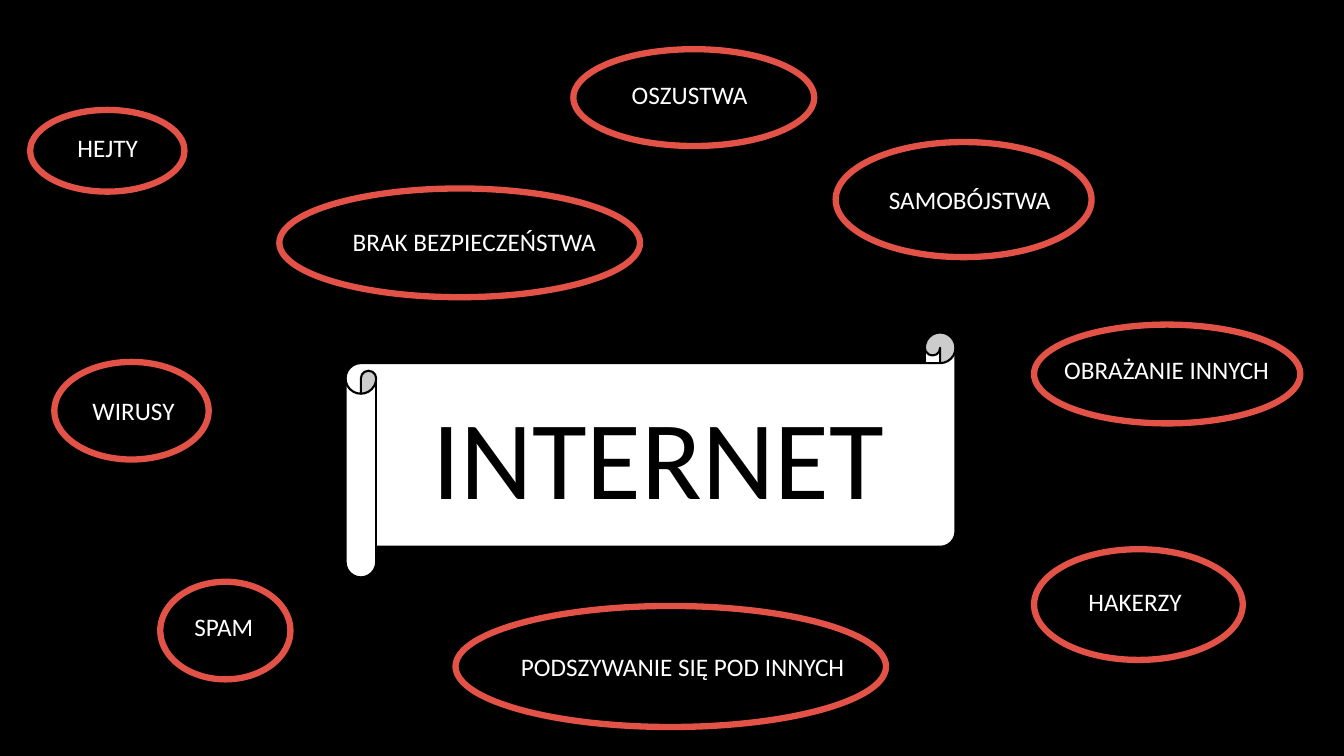
from pptx import Presentation
from pptx.dml.color import RGBColor
from pptx.enum.shapes import MSO_SHAPE
from pptx.enum.text import MSO_ANCHOR, MSO_AUTO_SIZE, PP_ALIGN
from pptx.util import Cm, Pt

OVAL, SCROLL = MSO_SHAPE.OVAL, MSO_SHAPE.HORIZONTAL_SCROLL
MIDDLE, TOP = MSO_ANCHOR.MIDDLE, MSO_ANCHOR.TOP
LEFT, CENTER = PP_ALIGN.LEFT, PP_ALIGN.CENTER
GROW = MSO_AUTO_SIZE.SHAPE_TO_FIT_TEXT

LABEL_HEIGHT = 1.02

# Threat, label (left, top, width), ring (left, top, width, height), in cm
THREATS = [
    ("BRAK BEZPIECZEŃSTWA", (8.64, 5.59, 7.47), (7.04, 4.75, 9.09, 2.74)),
    ("OSZUSTWA", (15.67, 1.88, 9.73), (14.45, 1.24, 6.07, 2.44)),
    ("SAMOBÓJSTWA", (22.15, 4.52, 6.45), (21.06, 3.58, 6.45, 2.9)),
    ("HEJTY", (1.7, 3.2, 5.33), (0.76, 2.77, 3.89, 2.06)),
    ("WIRUSY", (2.08, 9.83, 4.37), (1.37, 9.12, 3.89, 2.46)),
    ("SPAM", (4.65, 15.27, 4.78), (4.04, 14.66, 3.28, 2.46)),
    ("PODSZYWANIE SIĘ POD INNYCH", (12.88, 16.28, 9.73), (11.48, 15.27, 10.85, 3.05)),
    ("HAKERZY", (27.18, 14.66, 5.26), (26.06, 13.84, 5.26, 2.79)),
    ("OBRAŻANIE INNYCH", (26.57, 8.81, 6.45), (26.06, 8.18, 6.71, 2.49)),
]


def color(hex_value):
    return RGBColor.from_string(hex_value)


def write(frame, text, *, font, size, ink, align=LEFT, anchor=TOP):
    frame.word_wrap = True
    frame.vertical_anchor = anchor
    paragraph = frame.paragraphs[0]
    paragraph.alignment = align
    run = paragraph.add_run()
    run.text = text
    run.font.name = font
    run.font.size = Pt(size)
    run.font.color.rgb = color(ink)


class ThreatMap:
    font = "Calibri"
    black, white, red = "000000", "FFFFFF", "E25247"

    def __init__(self, slide):
        self.slide = slide
        background = slide.background.fill
        background.solid()
        background.fore_color.rgb = color(self.black)

    def outline(self, preset, box, line, width, fill=None):
        shape = self.slide.shapes.add_shape(preset, *map(Cm, box))
        shape.shadow.inherit = False
        if fill:
            shape.fill.solid()
            shape.fill.fore_color.rgb = color(fill)
        else:
            shape.fill.background()
        shape.line.color.rgb = color(line)
        shape.line.width = Pt(width)
        return shape

    def banner(self, text, box):
        scroll = self.outline(SCROLL, box, self.black, 1.5, self.white)
        write(scroll.text_frame, text, font=self.font, size=80, ink=self.black,
              align=CENTER, anchor=MIDDLE)

    def label(self, text, box):
        frame = self.slide.shapes.add_textbox(*map(Cm, box)).text_frame
        write(frame, text, font=self.font, size=18, ink=self.white)
        frame.auto_size = GROW

    def ring(self, box):
        self.outline(OVAL, box, self.red, 4.5)


def main():
    deck = Presentation()
    deck.slide_width, deck.slide_height = Cm(33.87), Cm(19.05)
    threat_map = ThreatMap(deck.slides.add_slide(deck.slide_layouts[6]))

    # Central topic
    threat_map.banner("INTERNET", (8.71, 8.38, 15.37, 6.17))

    # Threats around it
    for threat, label_box, ring_box in THREATS:
        threat_map.label(threat, (*label_box, LABEL_HEIGHT))
        threat_map.ring(ring_box)

    deck.save("out.pptx")


if __name__ == "__main__":
    main()
